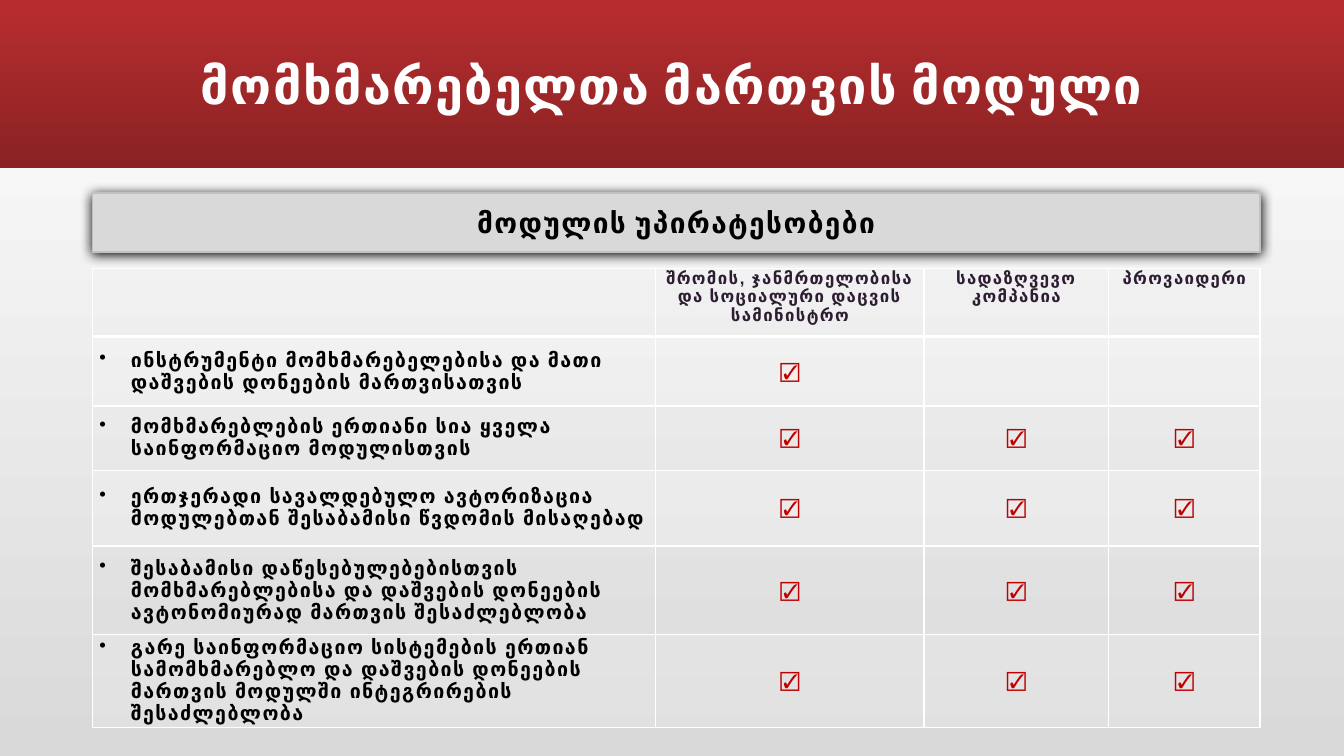
from lxml.etree import SubElement
from pptx import Presentation
from pptx.dml.color import RGBColor
from pptx.enum.shapes import MSO_SHAPE
from pptx.enum.text import MSO_ANCHOR, PP_ALIGN
from pptx.oxml import parse_xml
from pptx.oxml.ns import nsdecls, qn
from pptx.util import Pt

COLORS = {
    "white": "FFFFFF", "black": "000000", "gray": "D9D9D9", "outline": "C1C0C3",
    "red": "B82D2F", "dark red": "8A2223", "heading": "2D1D32", "check": "C00000",
}
CHECK = "☑"
HEADINGS = ["", "შრომის, ჯანმრთელობისა და სოციალური დაცვის სამინისტრო",
            "სადაზღვევო კომპანია", "პროვაიდერი"]
# Each benefit with the number of institutions that have it, from the left.
BENEFITS = [
    ("ინსტრუმენტი მომხმარებელებისა და მათი დაშვების დონეების მართვისათვის", 1),
    ("მომხმარებლების ერთიანი სია ყველა საინფორმაციო მოდულისთვის", 3),
    ("ერთჯერადი სავალდებულო ავტორიზაცია მოდულებთან შესაბამისი წვდომის მისაღებად", 3),
    ("შესაბამისი დაწესებულებებისთვის მომხმარებლებისა და დაშვების დონეების "
     "ავტონომიურად მართვის შესაძლებლობა", 3),
    ("გარე საინფორმაციო სისტემების ერთიან სამომხმარებლო და დაშვების დონეების "
     "მართვის მოდულში ინტეგრირების შესაძლებლობა", 3),
]
COLUMN_WIDTHS = [402.5, 191.5, 132, 108]
ROW_HEIGHTS = [48.5, 49.5, 46, 54, 63.5, 66]


def rgb(name):
    return RGBColor.from_string(COLORS[name])


class SlideBuilder:
    def __init__(self, deck):
        self.page = deck.slides.add_slide(deck.slide_layouts[5])

    def gradient(self, fill, start, end, angle):
        fill.gradient()
        fill.gradient_angle = angle
        for stop, name, position in zip(fill.gradient_stops, (start, end), (0, 1)):
            stop.color.rgb = rgb(name)
            stop.position = position

    def set_text(self, frame, text, size, color, font="Arial", align=PP_ALIGN.CENTER):
        """Fill the frame with one bold, slightly letter-spaced paragraph."""
        frame.word_wrap = True
        para = frame.paragraphs[0]
        para.text = text
        para.alignment = align
        para.font.size = Pt(size)
        para.font.name = font
        para.font.bold = True
        para.font.color.rgb = rgb(color)
        para._p.pPr.find(qn("a:defRPr")).set("spc", "100")
        return para

    def rectangle(self, left, top, width, height):
        box = self.page.shapes.add_shape(
            MSO_SHAPE.RECTANGLE, Pt(left), Pt(top), Pt(width), Pt(height))
        box.shadow.inherit = False
        box.line.fill.background()
        return box

    def title(self, text, left, top, width, height):
        """Place the title in front of everything drawn so far."""
        box = self.page.shapes.title
        box.left, box.top, box.width, box.height = map(Pt, (left, top, width, height))
        box.text_frame.vertical_anchor = MSO_ANCHOR.MIDDLE
        self.set_text(box.text_frame, text, 36, "white", "Cabin")
        box.element.getparent().append(box.element)

    def subtitle(self, text, left, top, width, height):
        box = self.rectangle(left, top, width, height)
        box.fill.solid()
        box.fill.fore_color.rgb = rgb("gray")
        box.line.color.rgb = rgb("outline")
        box.line.width = Pt(1)
        effects = box.element.spPr.find(qn("a:effectLst"))
        shadow = SubElement(effects, qn("a:outerShdw"), blurRad=str(Pt(8.5)),
                            dist=str(Pt(1)), dir="5400000", algn="ctr", rotWithShape="0")
        SubElement(shadow, qn("a:srgbClr"), val=COLORS["black"])
        box.text_frame.vertical_anchor = MSO_ANCHOR.MIDDLE
        self.set_text(box.text_frame, text, 20, "black", "Cabin")

    def table(self, left, top, widths, heights):
        table = self.page.shapes.add_table(
            len(heights), len(widths), Pt(left), Pt(top),
            Pt(sum(widths)), Pt(sum(heights))).table
        table.first_row = table.horz_banding = False
        for column, width in zip(table.columns, widths):
            column.width = Pt(width)
        for row, height in zip(table.rows, heights):
            row.height = Pt(height)
        for number, row in enumerate(table.rows):
            for cell in row.cells:
                self.style_cell(cell, number)
        return table

    def style_cell(self, cell, row):
        """Tint odd rows, and rule the header off with a thicker line."""
        cell.margin_left = cell.margin_right = Pt(5)
        cell.margin_top = cell.margin_bottom = 0
        cell.vertical_anchor = MSO_ANCHOR.MIDDLE if row else MSO_ANCHOR.TOP
        properties = cell._tc.get_or_add_tcPr()
        if row % 2:
            cell.fill.solid()
            cell.fill.fore_color.rgb = rgb("white")
            SubElement(properties.find(".//" + qn("a:srgbClr")), qn("a:alpha"), val="20000")
        else:
            cell.fill.background()
        thick_side = {0: "B", 1: "T"}.get(row)
        for index, side in enumerate("LRTB"):
            width = Pt(2 if side == thick_side else 1)
            properties.insert(index, parse_xml(
                f'<a:ln{side} {nsdecls("a")} w="{width}"><a:solidFill>'
                f'<a:srgbClr val="{COLORS["white"]}"/></a:solidFill></a:ln{side}>'))

    def bullet(self, para):
        para.space_before = Pt(12)
        properties = para._p.get_or_add_pPr()
        properties.set("marL", str(Pt(22.5)))
        properties.set("indent", str(Pt(-22.5)))
        mark = parse_xml(f'<a:buChar {nsdecls("a")} char="•"/>')
        properties.find(qn("a:defRPr")).addprevious(mark)


def main():
    deck = Presentation()
    deck.slide_width, deck.slide_height = Pt(960), Pt(540)
    builder = SlideBuilder(deck)
    builder.gradient(builder.page.background.fill, "gray", "white", 90)
    banner = builder.rectangle(0, 0, 960, 120)
    builder.gradient(banner.fill, "red", "dark red", 270)
    builder.title("მომხმარებელთა მართვის მოდული", 84, 8, 792, 104)
    builder.subtitle("მოდულის უპირატესობები", 66, 138, 834, 42)

    table = builder.table(66, 192, COLUMN_WIDTHS, ROW_HEIGHTS)
    for column, heading in enumerate(HEADINGS):
        if heading:
            builder.set_text(table.cell(0, column).text_frame, heading, 12, "heading")
    for row, (benefit, checks) in enumerate(BENEFITS, 1):
        builder.bullet(builder.set_text(table.cell(row, 0).text_frame, benefit, 14,
                                        "black", align=PP_ALIGN.LEFT))
        for column in range(1, checks + 1):
            builder.set_text(table.cell(row, column).text_frame, CHECK, 14, "check")
    deck.save("out.pptx")


if __name__ == "__main__":
    main()
